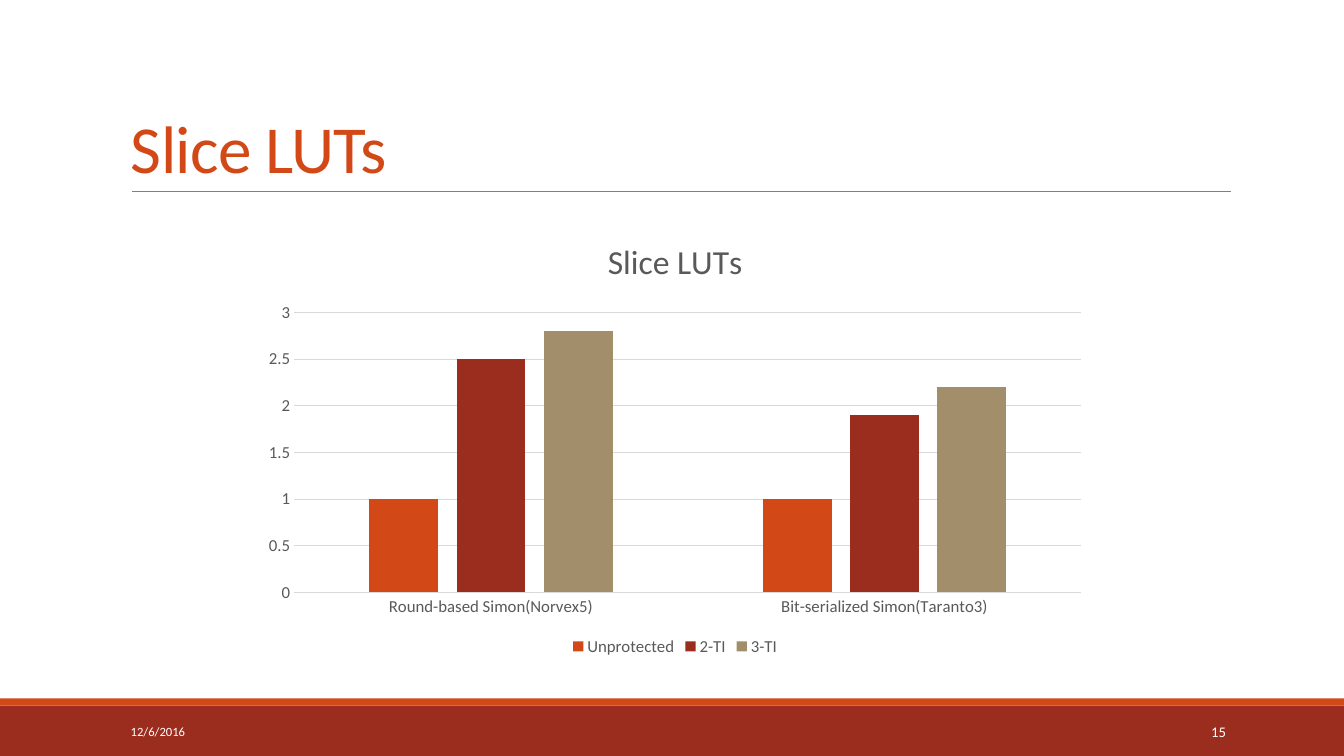
import dataclasses
import typing

import lxml.etree
import pptx
import pptx.chart.data
import pptx.dml.color
import pptx.enum.chart
import pptx.enum.shapes
import pptx.enum.text
import pptx.oxml.ns
import pptx.util

SCALE = 9525
FACE = "Calibri"
HUES = {
    "orange": "D34817", "red": "9B2D1F", "tan": "A28E6A", "white": "FFFFFF",
    "rule": "808080", "grid": "D9D9D9", "text": "595959",
}
ALIGN = pptx.enum.text.PP_ALIGN
ANCHOR = pptx.enum.text.MSO_ANCHOR
TICK = pptx.enum.chart.XL_TICK_MARK


@dataclasses.dataclass
class Box:
    left: int
    top: int
    width: int
    height: int

    def emu(self) -> list[int]:
        return [px(n) for n in (self.left, self.top, self.width, self.height)]


@dataclasses.dataclass
class Band:
    box: Box
    hue: str


@dataclasses.dataclass
class Note:
    box: Box
    text: str
    size: float
    align: typing.Any


@dataclasses.dataclass
class Group:
    name: str
    hue: str
    vals: tuple[float, ...]


BANDS = [
    Band(Box(0, 672, 1280, 48), "red"),
    Band(Box(0, 665, 1280, 7), "orange"),
]
NOTES = [
    Note(Box(115, 678, 259, 38), "12/6/2016", 9, ALIGN.LEFT),
    Note(Box(1040, 678, 137, 38), "15", 10.5, ALIGN.RIGHT),
]
CATS = ["Round-based Simon(Norvex5)", "Bit-serialized Simon(Taranto3)"]
GROUPS = [
    Group("Unprotected", "orange", (1, 1)),
    Group("2-TI", "red", (2.5, 1.9)),
    Group("3-TI", "tan", (2.8, 2.2)),
]


def px(n: int) -> int:
    return pptx.util.Emu(n * SCALE)


def rgb(hue: str) -> pptx.dml.color.RGBColor:
    return pptx.dml.color.RGBColor.from_string(HUES[hue])


def put(item: typing.Any, form: dict[str, typing.Any]) -> None:
    for key, val in form.items():
        setattr(item, key, val)


def style(font: typing.Any, size: float, hue: str) -> None:
    put(font, {"name": FACE, "size": pptx.util.Pt(size), "bold": False})
    font.color.rgb = rgb(hue)


def stroke(line: typing.Any, hue: str, width: float) -> None:
    line.color.rgb = rgb(hue)
    line.width = pptx.util.Pt(width)


def band(slide: typing.Any, part: Band) -> None:
    kind = pptx.enum.shapes.MSO_SHAPE.RECTANGLE
    shape = slide.shapes.add_shape(kind, *part.box.emu())
    shape.shadow.inherit = False
    shape.fill.solid()
    shape.fill.fore_color.rgb = rgb(part.hue)
    shape.line.fill.background()


def rule(slide: typing.Any) -> None:
    kind = pptx.enum.shapes.MSO_CONNECTOR.STRAIGHT
    line = slide.shapes.add_connector(kind, px(126), px(182), px(1172), px(182))
    stroke(line.line, "rule", 0.5)
    lxml.etree.SubElement(line._element.spPr, pptx.oxml.ns.qn("a:effectLst"))


def title(slide: typing.Any) -> None:
    shape = slide.shapes.title
    spots = Box(115, 30, 1056, 153).emu()
    put(shape, dict(zip(("left", "top", "width", "height"), spots)))
    frame = shape.text_frame
    frame.text = "Slice LUTs"
    put(frame, {"vertical_anchor": ANCHOR.BOTTOM, "word_wrap": True,
                "auto_size": pptx.enum.text.MSO_AUTO_SIZE.NONE})
    para = frame.paragraphs[0]
    put(para, {"alignment": ALIGN.LEFT, "line_spacing": 0.85})
    run = para.runs[0]
    style(run.font, 48, "orange")
    run._r.get_or_add_rPr().set("spc", "-50")


def note(slide: typing.Any, part: Note) -> None:
    frame = slide.shapes.add_textbox(*part.box.emu()).text_frame
    put(frame, {"text": part.text, "word_wrap": True,
                "vertical_anchor": ANCHOR.MIDDLE})
    para = frame.paragraphs[0]
    para.alignment = part.align
    style(para.runs[0].font, part.size, "white")


def graph(slide: typing.Any) -> None:
    data = pptx.chart.data.CategoryChartData()
    data.categories = CATS
    for group in GROUPS:
        data.add_series(group.name, group.vals)
    kind = pptx.enum.chart.XL_CHART_TYPE.COLUMN_CLUSTERED
    spots = Box(240, 208, 806, 421).emu()
    chart = slide.shapes.add_chart(kind, *spots, data).chart
    style(chart.font, 12, "text")

    head = chart.chart_title.text_frame
    head.text = "Slice LUTs"
    style(head.paragraphs[0].runs[0].font, 24, "text")

    chart.has_legend = True
    place = pptx.enum.chart.XL_LEGEND_POSITION.BOTTOM
    put(chart.legend, {"position": place, "include_in_layout": False})
    style(chart.legend.font, 12, "text")

    plot = chart.plots[0]
    put(plot, {"gap_width": 219, "overlap": -27, "vary_by_categories": False})
    for bar, group in zip(plot.series, GROUPS):
        bar.format.fill.solid()
        bar.format.fill.fore_color.rgb = rgb(group.hue)

    cat, val = chart.category_axis, chart.value_axis
    for axis in (cat, val):
        put(axis, {"major_tick_mark": TICK.NONE, "minor_tick_mark": TICK.NONE})
        style(axis.tick_labels.font, 12, "text")
    stroke(cat.format.line, "grid", 0.75)
    val.format.line.fill.background()
    put(val, {"minimum_scale": 0, "maximum_scale": 3, "major_unit": 0.5,
              "has_major_gridlines": True})
    stroke(val.major_gridlines.format.line, "grid", 0.75)


def main() -> None:
    deck = pptx.Presentation()
    put(deck, {"slide_width": px(1280), "slide_height": px(720)})
    slide = deck.slides.add_slide(deck.slide_layouts.get_by_name("Title Only"))
    for part in BANDS:
        band(slide, part)
    rule(slide)
    title(slide)
    for part in NOTES:
        note(slide, part)
    graph(slide)
    deck.save("out.pptx")


if __name__ == "__main__":
    main()
